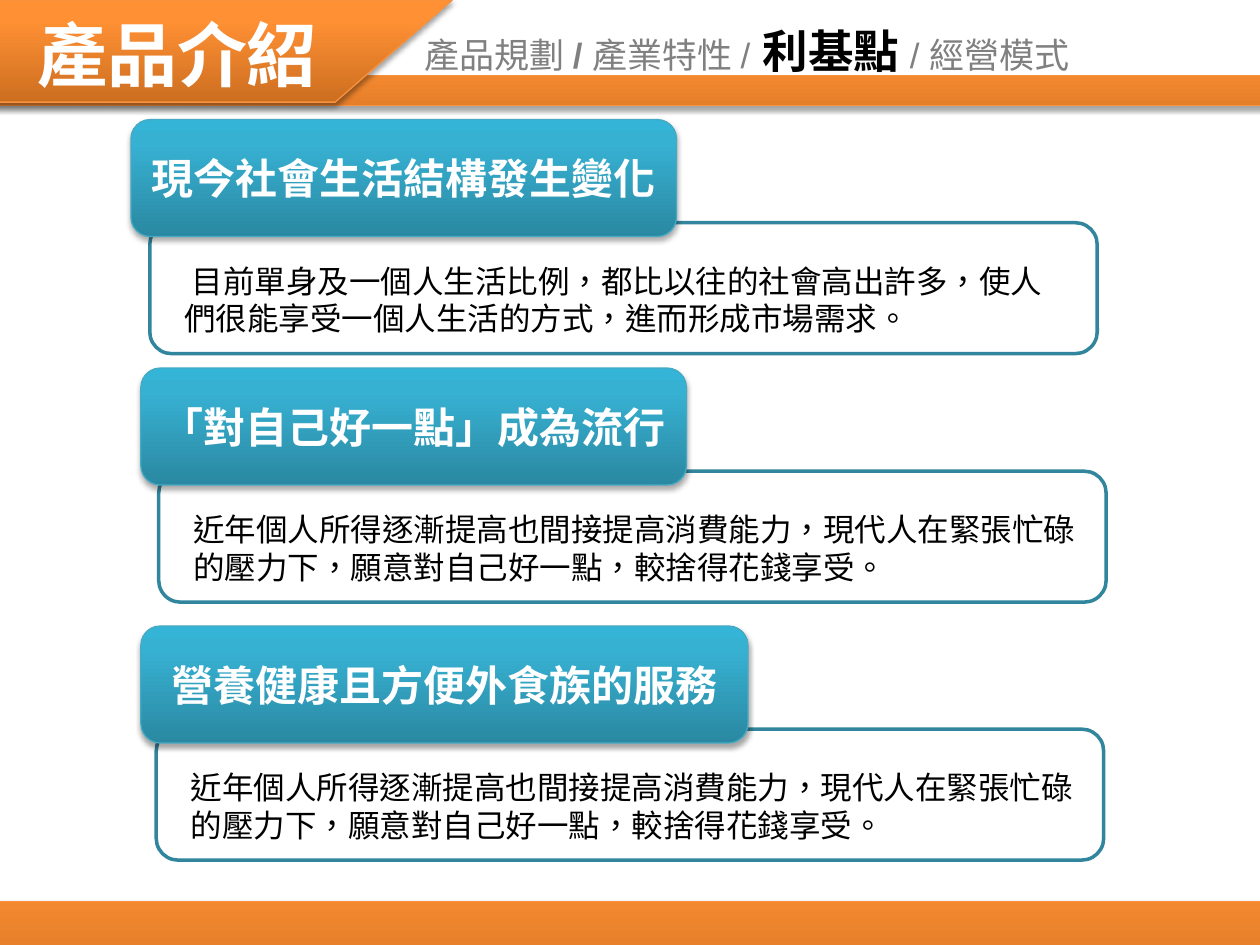
from copy import deepcopy

from lxml import etree
from pptx import Presentation
from pptx import util as u
from pptx.dml import color
from pptx.enum import lang, shapes, text
from pptx.oxml import ns

ORANGE = {"stops": [(0, "CC6E20"), (0.8, "FF9034"), (1, "FF9136")], "line": "F69240"}
TEAL = {"stops": [(0, "2A88A2"), (0.8, "37B1D2"), (1, "34B4D6")], "line": "46AAC5"}
FRAME_LINE = "31859C"
CJK = "Noto Sans CJK SC"

TREND = "近年個人所得逐漸提高也間接提高消費能力，現代人在緊張忙碌的壓力下，願意對自己好一點，較捨得花錢享受。"
# heading, body, heading left, top and width, frame left (cm)
SECTIONS = [
    ("現今社會生活結構發生變化",
     " 目前單身及一個人生活比例，都比以往的社會高出許多，使人們很能享受一個人生活的方式，進而形成市場需求。",
     2.64, 2.41, 11, 3.02),
    ("「對自己好一點」成為流行", TREND, 2.84, 7.42, 11, 3.2),
    ("營養健康且方便外食族的服務", TREND, 2.84, 12.62, 12.24, 3.15),
]


def rgb(value):
    return color.RGBColor.from_string(value)


def child(parent, tag, **values):
    return etree.SubElement(parent, ns.qn(tag), values)


class SlideBuilder:
    def __init__(self, page):
        self.page = page

    def add_text(self, box, runs, align=text.PP_ALIGN.LEFT, **frame_format):
        """Fill a box with runs of (wording, size, colour, bold, font)."""
        frame = box.text_frame
        for name, value in frame_format.items():
            setattr(frame, name, value)
        para = frame.paragraphs[0]
        para.alignment = align
        for wording, size, ink, bold, face in runs:
            span = para.add_run()
            span.text = wording
            values = {"size": u.Pt(size), "bold": bold, "name": face,
                      "language_id": lang.MSO_LANGUAGE_ID.TRADITIONAL_CHINESE}
            for name, value in values.items():
                setattr(span.font, name, value)
            span.font.color.rgb = rgb(ink)
            child(span.font._element, "a:ea", typeface=CJK)

    def shape(self, kind, place, line, width):
        box = self.page.shapes.add_shape(kind, *map(u.Cm, place))
        box.shadow.inherit = False
        box.fill.background()
        box.line.color.rgb = rgb(line)
        box.line.width = u.Pt(width)
        return box

    def glossy(self, kind, place, style):
        """A shape with a three-stop vertical gradient and a soft shadow."""
        box = self.shape(kind, place, style["line"], 0.75)
        box.fill.gradient()
        box.fill.gradient_angle = 90
        properties = box.element.spPr
        first = properties.find(".//" + ns.qn("a:gs"))
        first.addnext(deepcopy(first))
        for stop, (position, tone) in zip(box.fill.gradient_stops, style["stops"]):
            stop.position = position
            stop.color.rgb = rgb(tone)
        shadow = child(properties.find(ns.qn("a:effectLst")), "a:outerShdw",
                       blurRad=str(u.Pt(3.1)), dist=str(u.Pt(1.8)),
                       dir="5400000", rotWithShape="0")
        child(child(shadow, "a:srgbClr", val="000000"), "a:alpha", val="35000")
        return box

    def label(self, place, runs, wrap=True):
        box = self.page.shapes.add_textbox(*map(u.Cm, place))
        self.add_text(box, runs, word_wrap=wrap,
                      auto_size=text.MSO_AUTO_SIZE.SHAPE_TO_FIT_TEXT)

    def title(self, place, runs):
        box = self.page.shapes.title
        box.element.getparent().append(box.element)
        for name, value in zip(("left", "top", "width", "height"), place):
            setattr(box, name, u.Cm(value))
        self.add_text(box, runs, word_wrap=True, auto_size=text.MSO_AUTO_SIZE.NONE,
                      vertical_anchor=text.MSO_ANCHOR.MIDDLE)

    def section(self, heading, body, left, top, width, frame_left):
        kind = shapes.MSO_SHAPE.ROUNDED_RECTANGLE
        self.shape(kind, (frame_left, top + 2.08, 19.1, 2.64), FRAME_LINE, 2)
        tab = self.glossy(kind, (left, top, width, 2.36), TEAL)
        self.add_text(tab, [(heading, 24, "FFFFFF", True, "Arial")],
                      text.PP_ALIGN.CENTER, word_wrap=True,
                      vertical_anchor=text.MSO_ANCHOR.MIDDLE)
        self.label((frame_left + 0.45, top + 2.74, 18.39, 1.8),
                   [(body, 18, "000000", False, "Arial")])


def main():
    deck = Presentation()
    deck.slide_width, deck.slide_height = u.Cm(25.4), u.Cm(19.05)
    builder = SlideBuilder(deck.slides.add_slide(deck.slide_layouts[5]))

    # Orange bands and corner banner
    minus = shapes.MSO_SHAPE.MATH_MINUS
    builder.glossy(minus, (-6.53, 0.53, 37.41, 2.59), ORANGE)
    builder.glossy(shapes.MSO_SHAPE.FLOWCHART_DATA, (-2.69, 0, 11.81, 2.06), ORANGE)
    builder.label((0.5, 0.1, 6.22, 1.96),
                  [("產品介紹", 40, "FFFFFF", True, CJK)], wrap=False)
    builder.glossy(minus, (-6.2, 16.54, 37.41, 4.29), ORANGE)

    # Navigation title with the current topic in black
    builder.title((8.31, 0, 22.86, 2.01), [
        ("產品規劃 ", 20, "808080", False, "Arial"),
        ("/ ", 20, "808080", True, "Arial"),
        ("產業特性 /", 20, "808080", False, "Arial"),
        (" 利基點 ", 26, "000000", True, "Arial"),
        ("/ 經營模式", 20, "808080", False, "Arial"),
    ])

    # Three niche points
    for section in SECTIONS:
        builder.section(*section)

    deck.save("out.pptx")


if __name__ == "__main__":
    main()
